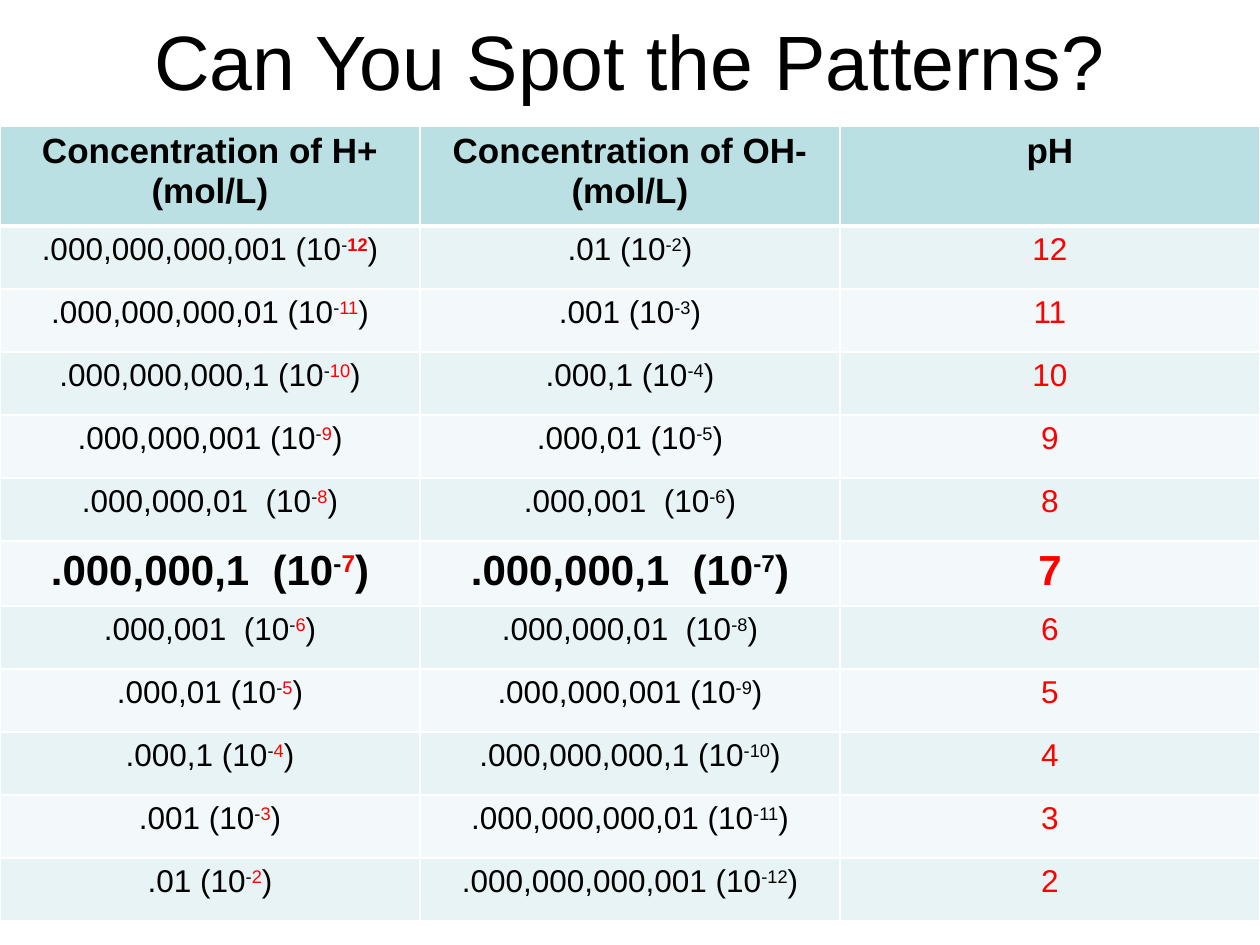
from lxml.etree import SubElement
from pptx import Presentation
from pptx.dml.color import RGBColor
from pptx.enum.text import MSO_ANCHOR, PP_ALIGN
from pptx.oxml.ns import qn
from pptx.util import Pt

SCALE = 914400 / 126
SLIDE_WIDTH, SLIDE_HEIGHT = 1260, 945
TABLE_TOP, COLUMN_WIDTH = 126, 420
HEADER_HEIGHT, ROW_HEIGHT, NEUTRAL_HEIGHT = 100, 63, 65
COLORS = {
    "text": "000000",
    "highlight": "FF0000",
    "border": "FFFFFF",
    "header": "BBE0E3",
    "odd": "E7F3F4",
    "even": "F3F9FA",
}
HEADINGS = ["Concentration of H+ (mol/L)", "Concentration of OH- (mol/L)", "pH"]
PH_VALUES = range(12, 1, -1)
NEUTRAL_PH = 7
EXPONENT_SUM = 14


def px(length):
    return round(length * SCALE)


def add_span(para, text, size=18, color="text", bold=False, raised=False):
    span = para.add_run()
    span.text = text
    span.font.name = "Arial"
    span.font.size = Pt(size)
    span.font.bold = bold
    span.font.color.rgb = RGBColor.from_string(COLORS[color])
    if raised:
        span.font._element.set("baseline", "30000")


def add_title(page, text):
    box = page.shapes.add_textbox(px(63), 0, px(1134), px(120))
    frame = box.text_frame
    frame.word_wrap = True
    frame.vertical_anchor = MSO_ANCHOR.MIDDLE
    para = frame.paragraphs[0]
    para.alignment = PP_ALIGN.CENTER
    add_span(para, text, size=44)


def style_cell(cell, fill, top=1, bottom=1):
    """Set borders (widths in points), fill and centring; return the paragraph."""
    properties = cell._tc.get_or_add_tcPr()
    for side, width in (("L", 1), ("R", 1), ("T", top), ("B", bottom)):
        line = SubElement(properties, qn(f"a:ln{side}"), w=str(Pt(width)))
        line_fill = SubElement(line, qn("a:solidFill"))
        SubElement(line_fill, qn("a:srgbClr"), val=COLORS["border"])
    cell.fill.solid()
    cell.fill.fore_color.rgb = RGBColor.from_string(COLORS[fill])
    para = cell.text_frame.paragraphs[0]
    para.alignment = PP_ALIGN.CENTER
    return para


def decimal_text(exponent):
    """Write 10 to the power -exponent with its decimals in groups of three."""
    digits = "0" * (exponent - 1) + "1"
    groups = [digits[start:start + 3] for start in range(0, exponent, 3)]
    gap = "  " if exponent in (6, 7, 8) else " "
    return "." + ",".join(groups) + gap


def add_concentration(para, exponent, color, bold_exponent, **style):
    add_span(para, decimal_text(exponent) + "(10", **style)
    add_span(para, "-", raised=True, **style)
    exponent_style = {**style, "bold": bold_exponent, "color": color}
    add_span(para, str(exponent), raised=True, **exponent_style)
    add_span(para, ")", **style)


def add_ph_table(page):
    heights = [HEADER_HEIGHT] + [
        NEUTRAL_HEIGHT if ph == NEUTRAL_PH else ROW_HEIGHT for ph in PH_VALUES
    ]
    table = page.shapes.add_table(
        len(heights), len(HEADINGS), 0, px(TABLE_TOP), px(SLIDE_WIDTH), px(sum(heights))
    ).table
    for column in table.columns:
        column.width = px(COLUMN_WIDTH)
    for row, height in zip(table.rows, heights):
        row.height = px(height)

    for column, heading in enumerate(HEADINGS):
        para = style_cell(table.cell(0, column), "header", bottom=3)
        add_span(para, heading, size=20, bold=True)

    for row, ph in enumerate(PH_VALUES, start=1):
        fill = "odd" if row % 2 else "even"
        top = 3 if row == 1 else 1
        hydrogen, hydroxide, value = [
            style_cell(table.cell(row, column), fill, top=top)
            for column in range(len(HEADINGS))
        ]
        neutral = ph == NEUTRAL_PH
        style = {"size": 24 if neutral else 18, "bold": neutral}
        add_concentration(hydrogen, ph, "highlight", neutral or row == 1, **style)
        add_concentration(hydroxide, EXPONENT_SUM - ph, "text", neutral, **style)
        add_span(value, str(ph), color="highlight", **style)


def main():
    deck = Presentation()
    deck.slide_width, deck.slide_height = px(SLIDE_WIDTH), px(SLIDE_HEIGHT)
    page = deck.slides.add_slide(deck.slide_layouts[6])
    add_title(page, "Can You Spot the Patterns?")
    add_ph_table(page)
    deck.save("out.pptx")


if __name__ == "__main__":
    main()
